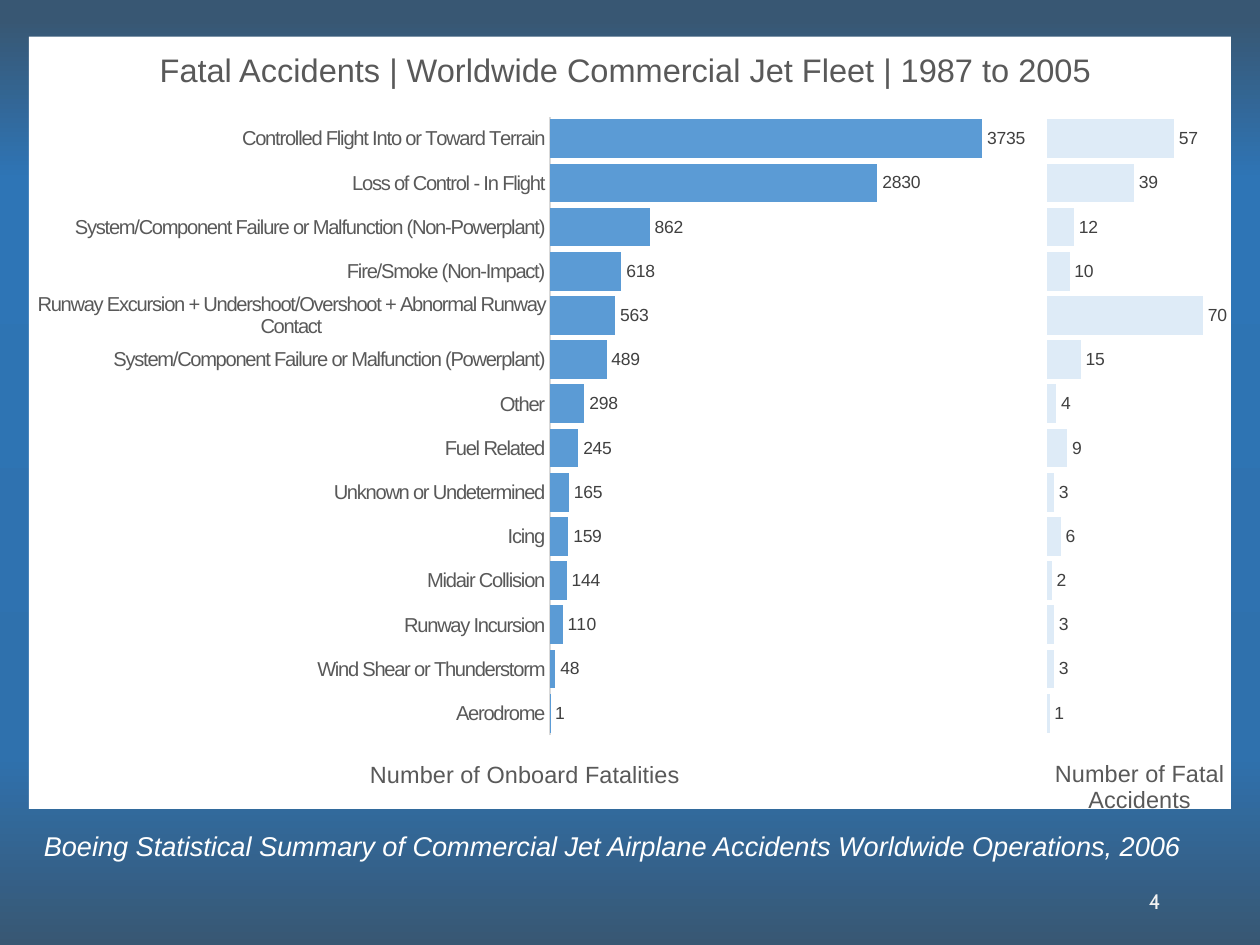
from lxml import etree
from pptx import Presentation
from pptx.chart.data import CategoryChartData
from pptx.dml.color import RGBColor
from pptx.enum.chart import XL_CHART_TYPE, XL_LABEL_POSITION, XL_TICK_MARK
from pptx.enum.shapes import MSO_SHAPE
from pptx.enum.text import MSO_ANCHOR, PP_ALIGN
from pptx.oxml.ns import qn
from pptx.util import Inches, Pt

COLORS = {
    "edge": "385773", "upper": "2E75B6", "lower": "2F71AD", "white": "FFFFFF",
    "number": "F2F2F2", "text": "595959", "label": "404040", "axis": "D9D9D9",
    "fatalities": "5B9BD5", "accidents": "DEEBF7", "black": "000000",
}
rgb = {name: RGBColor.from_string(value) for name, value in COLORS.items()}


def style(font, size, color, face="Arial"):
    font.size, font.name = Pt(size), face
    font.color.rgb = rgb[color]


def place(parent, **layout_values):
    layout = parent.find(qn("c:layout"))
    if layout is None:
        layout = etree.Element(qn("c:layout"))
        parent.insert(0, layout)
    manual = etree.SubElement(layout, qn("c:manualLayout"))
    for tag, value in layout_values.items():
        etree.SubElement(manual, qn(f"c:{tag}")).set("val", str(value))


prs = Presentation()
prs.slide_width, prs.slide_height = Inches(10), Inches(7.5)
slide = prs.slides.add_slide(prs.slide_layouts[6])

backdrop = slide.background.fill
backdrop.gradient()
backdrop.gradient_angle = 270
stops = slide.element.find(".//" + qn("a:gsLst"))
for stop in list(stops):
    stops.remove(stop)
for percent, name in [(2, "edge"), (19, "upper"), (80, "lower"), (100, "edge")]:
    stop = etree.SubElement(stops, qn("a:gs"), pos=str(percent * 1000))
    etree.SubElement(stop, qn("a:srgbClr"), val=COLORS[name])

panel = slide.shapes.add_shape(
    MSO_SHAPE.RECTANGLE, Inches(0.23), Inches(0.29), Inches(9.54), Inches(6.13))
panel.shadow.inherit = False
panel.fill.solid()
panel.fill.fore_color.rgb = rgb["white"]
panel.line.fill.background()

texts = [
    ("Boeing Statistical Summary of Commercial Jet Airplane Accidents Worldwide Operations, 2006",
     (0.25, 6.53, 9.43, 0.36), 15.5, "white", "Arial", PP_ALIGN.LEFT, MSO_ANCHOR.TOP, True),
    ("4", (7.06, 6.95, 2.25, 0.4), 12, "number", "Cabin", PP_ALIGN.RIGHT, MSO_ANCHOR.MIDDLE, False),
    ("Fatal Accidents | Worldwide Commercial Jet Fleet | 1987 to 2005",
     (1.03, 0.35, 7.87, 0.41), 18.6, "text", "Arial", PP_ALIGN.CENTER, MSO_ANCHOR.TOP, False),
]
for words, box, size, color, face, align, anchor, italic in texts:
    frame = slide.shapes.add_textbox(*map(Inches, box)).text_frame
    frame.word_wrap = True
    frame.vertical_anchor = anchor
    paragraph = frame.paragraphs[0]
    paragraph.alignment = align
    run = paragraph.add_run()
    run.text = words
    style(run.font, size, color, face)
    run.font.italic = italic

causes = [
    ("Aerodrome", 1, 1),
    ("Wind Shear or Thunderstorm", 48, 3),
    ("Runway Incursion", 110, 3),
    ("Midair Collision", 144, 2),
    ("Icing", 159, 6),
    ("Unknown or Undetermined", 165, 3),
    ("Fuel Related", 245, 9),
    ("Other", 298, 4),
    ("System/Component Failure or Malfunction (Powerplant)", 489, 15),
    ("Runway Excursion + Undershoot/Overshoot + Abnormal Runway Contact", 563, 70),
    ("Fire/Smoke (Non-Impact)", 618, 10),
    ("System/Component Failure or Malfunction (Non-Powerplant)", 862, 12),
    ("Loss of Control - In Flight", 2830, 39),
    ("Controlled Flight Into or Toward Terrain", 3735, 57),
]
names, fatalities, accidents = zip(*causes)
ranks = [str(rank) for rank in range(1, len(causes) + 1)]

charts = [
    (names, fatalities, "fatalities", 0.05, 8.22, 4000, 0.525, 0.447,
     ["Number of Onboard Fatalities"], 0.347),
    (ranks, accidents, "accidents", 7.1, 2.7, 80, 0.449, 0.523,
     ["Number of Fatal", "Accidents"], 0.46),
]
for categories, values, color, left, width, top_value, plot_x, plot_w, caption, caption_x in charts:
    data = CategoryChartData()
    data.categories = categories
    data.add_series("Series 1", values)
    chart = slide.shapes.add_chart(
        XL_CHART_TYPE.BAR_CLUSTERED, Inches(left), Inches(0.35),
        Inches(width), Inches(6.2), data).chart
    style(chart.font, 10, "black", "Cabin")
    chart.has_legend = False
    chart.has_title = True
    title = chart.chart_title
    for index, line in enumerate(caption):
        frame = title.text_frame
        paragraph = frame.add_paragraph() if index else frame.paragraphs[0]
        run = paragraph.add_run()
        run.text = line
        style(run.font, 13.4, "text")
        run.font.bold = False
    place(title.element, xMode="edge", yMode="edge", x=caption_x, y=0.91)
    place(chart.element.find(".//" + qn("c:plotArea")), layoutTarget="inner",
          xMode="edge", yMode="edge", x=plot_x, y=0.093, w=plot_w, h=0.792)

    scale = chart.value_axis
    scale.minimum_scale, scale.maximum_scale = 0, top_value
    scale.has_major_gridlines = False
    scale.visible = False
    cause_axis = chart.category_axis
    if categories is names:
        cause_axis.major_tick_mark = XL_TICK_MARK.NONE
        cause_axis.format.line.color.rgb = rgb["axis"]
        cause_axis.format.line.width = Pt(0.75)
        style(cause_axis.tick_labels.font, 11.5, "text")
        cause_axis._element.find(".//" + qn("a:defRPr")).set("spc", "-60")
    else:
        cause_axis.visible = False

    plot = chart.plots[0]
    plot.gap_width = 14
    plot.vary_by_categories = False
    bars = plot.series[0]
    bars.format.fill.solid()
    bars.format.fill.fore_color.rgb = rgb[color]
    labels = bars.data_labels
    labels.show_value = True
    labels.position = XL_LABEL_POSITION.OUTSIDE_END
    style(labels.font, 10, "label")

prs.save("out.pptx")
